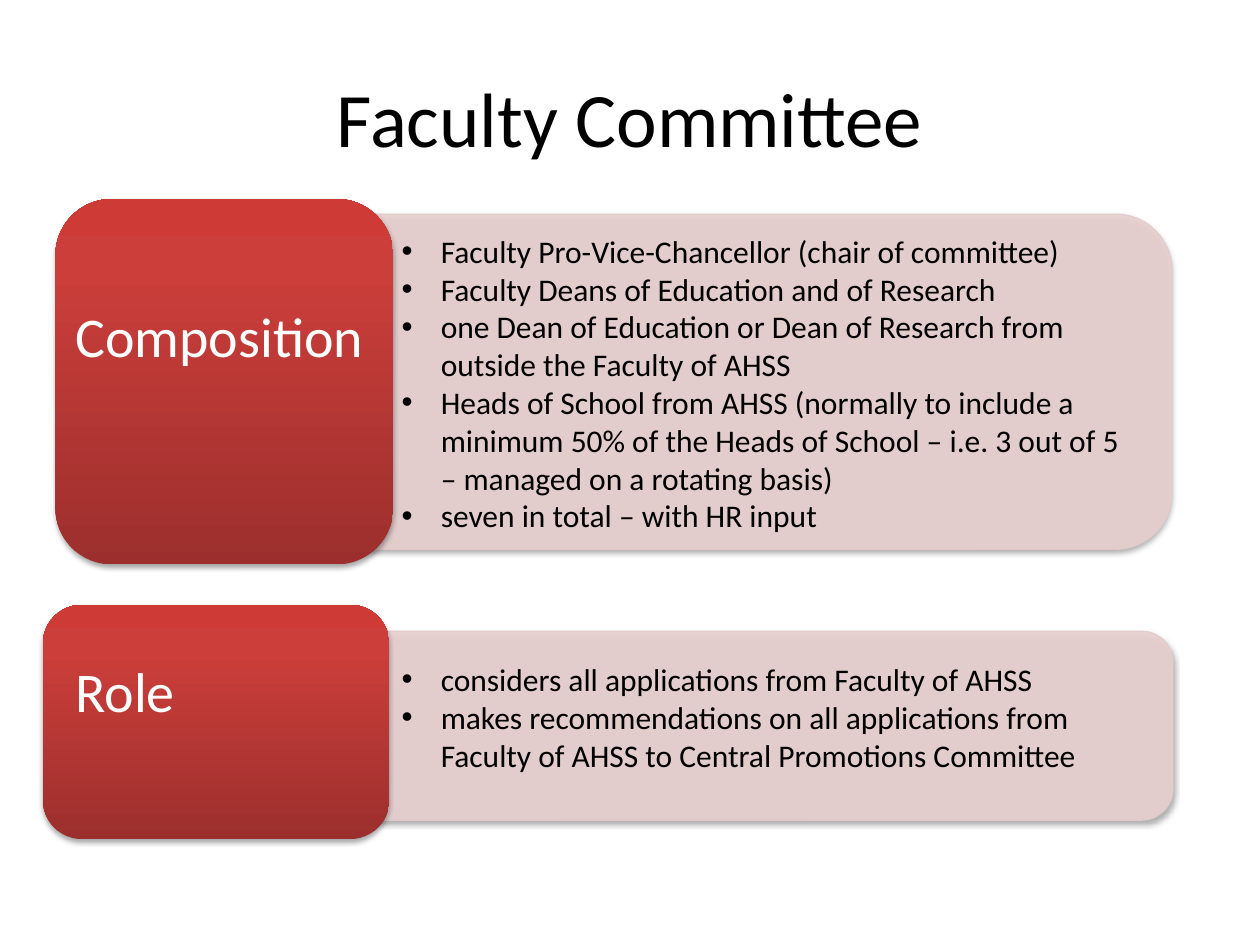
from copy import deepcopy

from lxml import etree
from pptx import Presentation
from pptx.dml.color import RGBColor
from pptx.enum.shapes import MSO_SHAPE
from pptx.enum.text import MSO_ANCHOR, MSO_AUTO_SIZE, PP_ALIGN
from pptx.oxml.ns import qn
from pptx.util import Inches, Pt

ROUNDED = MSO_SHAPE.ROUNDED_RECTANGLE
ROUNDED_TOP = MSO_SHAPE.ROUND_2_SAME_RECTANGLE
MIDDLE = MSO_ANCHOR.MIDDLE
TOP = MSO_ANCHOR.TOP
GROW = MSO_AUTO_SIZE.SHAPE_TO_FIT_TEXT
CENTER = PP_ALIGN.CENTER
TITLE_ONLY = 5

BLACK = RGBColor(0x00, 0x00, 0x00)
WHITE = RGBColor(0xFF, 0xFF, 0xFF)
PINK = RGBColor(0xE8, 0xD0, 0xD0)
PINK_EDGE = RGBColor(0xE3, 0xCB, 0xCB)
RED_STOPS = [
    (0, RGBColor(0x9C, 0x2F, 0x2D)),
    (0.8, RGBColor(0xCB, 0x3E, 0x3A)),
    (1, RGBColor(0xCE, 0x3B, 0x37)),
]

TITLE_FONT = {"name": "Calibri", "size": Pt(44)}
LABEL_FONT = {"name": "Calibri", "size": Pt(32)}
BODY_FONT = {"name": "Calibri", "size": Pt(18)}
INDENT = Inches(0.31)

# Boxes are left, top, width, height in inches
SECTIONS = [
    {
        "label": "Composition",
        "panel": (2.9, 1.7, 6.4, 2.66),
        "tile": (0.44, 1.58, 2.68, 2.9),
        "label_box": (0.5, 2.34, 2.6, 0.64),
        "body_box": (3.09, 1.79, 6, 2.52),
        "points": [
            "Faculty Pro-Vice-Chancellor (chair of committee)",
            "Faculty Deans of Education and of Research",
            "one Dean of Education or Dean of Research from outside the Faculty of AHSS",
            "Heads of School from AHSS (normally to include a minimum 50% of the "
            "Heads of School – i.e. 3 out of 5 – managed on a rotating basis)",
            "seven in total – with HR input",
        ],
    },
    {
        "label": "Role",
        "panel": (2.4, 5.01, 6.91, 1.5),
        "tile": (0.34, 4.8, 2.75, 1.86),
        "label_box": (0.5, 5.16, 2.43, 0.64),
        "body_box": (3.09, 5.19, 6, 1.01),
        "points": [
            "considers all applications from Faculty of AHSS",
            "makes recommendations on all applications from Faculty of AHSS to "
            "Central Promotions Committee",
        ],
    },
]


def inches(box):
    return [Inches(value) for value in box]


def format_run(run, font, color):
    for name, value in font.items():
        setattr(run.font, name, value)
    run.font.color.rgb = color


def add_alpha(color_parent, percent):
    color = color_parent.find(".//" + qn("a:srgbClr"))
    etree.SubElement(color, qn("a:alpha"), val=str(percent * 1000))


def add_shadow(shape):
    shape.shadow.inherit = False
    effects = shape._element.spPr.find(qn("a:effectLst"))
    shadow = etree.SubElement(
        effects, qn("a:outerShdw"), blurRad=str(Pt(3.1)), dist=str(Pt(1.8)),
        dir="5400000", rotWithShape="0")
    color = etree.SubElement(shadow, qn("a:srgbClr"), val=str(BLACK))
    etree.SubElement(color, qn("a:alpha"), val="35000")


def add_panel(slide, box):
    """Pale panel with rounded right corners: a round-top shape turned by 90°."""
    left, top, width, height = box
    offset = (width - height) / 2
    shape = slide.shapes.add_shape(
        ROUNDED_TOP, *inches((left + offset, top - offset, height, width)))
    shape.rotation = 90
    shape.fill.solid()
    shape.fill.fore_color.rgb = PINK
    shape.line.color.rgb = PINK_EDGE
    shape.line.width = Pt(0.75)
    properties = shape._element.spPr
    for tag in ("a:solidFill", "a:ln"):
        add_alpha(properties.find(qn(tag)), 90)
    add_shadow(shape)


def add_tile(slide, box):
    """Red tile, darkest at the bottom."""
    shape = slide.shapes.add_shape(ROUNDED, *inches(box))
    shape.fill.gradient()
    shape.fill.gradient_angle = 90
    stop_list = shape._element.spPr.find(".//" + qn("a:gsLst"))
    stop_list.append(deepcopy(stop_list[0]))
    for stop, (position, color) in zip(shape.fill.gradient_stops, RED_STOPS):
        stop.position = position
        stop.color.rgb = color
    shape.line.fill.background()
    add_shadow(shape)


def add_text(slide, box, lines, font, color, bulleted=False):
    frame = slide.shapes.add_textbox(*inches(box)).text_frame
    settings = {"word_wrap": True, "auto_size": GROW, "vertical_anchor": TOP}
    for name, value in settings.items():
        setattr(frame, name, value)
    for index, line in enumerate(lines):
        paragraph = frame.add_paragraph() if index else frame.paragraphs[0]
        run = paragraph.add_run()
        run.text = line
        format_run(run, font, color)
        if bulleted:
            properties = paragraph._p.get_or_add_pPr()
            properties.set("marL", str(INDENT))
            properties.set("indent", str(-INDENT))
            etree.SubElement(properties, qn("a:buFont"), typeface="Arial")
            etree.SubElement(properties, qn("a:buChar"), char="•")


def add_title(slide, text, box):
    title = slide.shapes.title
    title.left, title.top, title.width, title.height = inches(box)
    title.text_frame.text = text
    title.text_frame.vertical_anchor = MIDDLE
    paragraph = title.text_frame.paragraphs[0]
    paragraph.alignment = CENTER
    format_run(paragraph.runs[0], TITLE_FONT, BLACK)


def add_section(slide, section):
    add_panel(slide, section["panel"])
    add_tile(slide, section["tile"])
    add_text(slide, section["label_box"], [section["label"]], LABEL_FONT, WHITE)
    add_text(slide, section["body_box"], section["points"], BODY_FONT, BLACK,
             bulleted=True)


def main():
    presentation = Presentation()
    presentation.slide_width = Inches(10)
    presentation.slide_height = Inches(7.5)
    slide = presentation.slides.add_slide(presentation.slide_layouts[TITLE_ONLY])
    add_title(slide, "Faculty Committee", (0.5, 0.3, 9, 1.25))
    for section in SECTIONS:
        add_section(slide, section)
    presentation.save("out.pptx")


if __name__ == "__main__":
    main()
